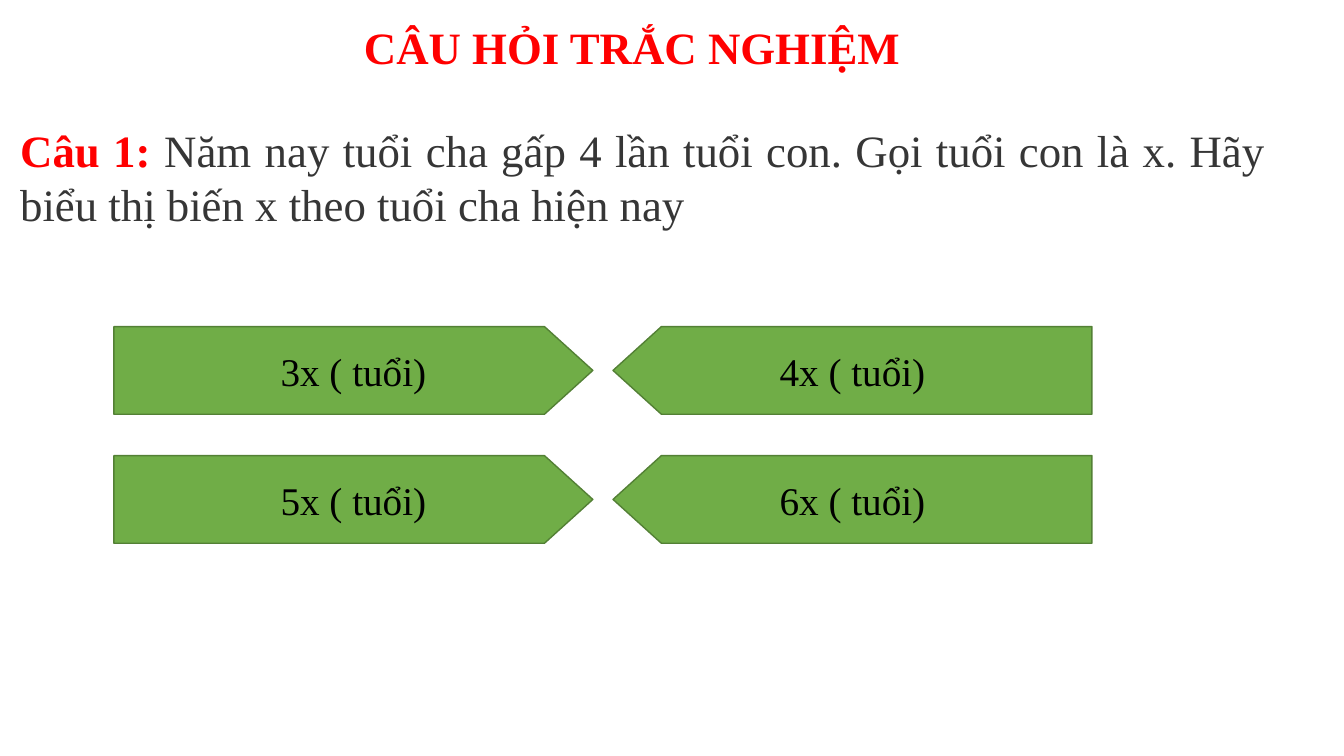
from lxml.etree import SubElement
from pptx import Presentation
from pptx.dml.color import RGBColor
from pptx.enum.text import MSO_ANCHOR, MSO_AUTO_SIZE, PP_ALIGN
from pptx.oxml.ns import qn
from pptx.util import Inches, Pt

# Content
HEADING = "CÂU HỎI TRẮC NGHIỆM"
QUESTION_LABEL = "Câu 1: "
QUESTION = ("Năm nay tuổi cha gấp 4 lần tuổi con. Gọi tuổi con là x. "
            "Hãy biểu thị biến x theo tuổi cha hiện nay")
ANSWERS = [["3x ( tuổi)", "4x ( tuổi)"],
           ["5x ( tuổi)", "6x ( tuổi)"]]

# Style
FONT = "Times New Roman"
RED = RGBColor(0xFF, 0x00, 0x00)
DARK_GRAY = RGBColor(0x36, 0x36, 0x36)
BLACK = RGBColor(0x00, 0x00, 0x00)
GREEN = RGBColor(0x70, 0xAD, 0x47)
DARK_GREEN = RGBColor(0x53, 0x80, 0x35)

# Answer grid, in inches
GRID_LEFT, GRID_TOP = 1.13, 3.24
ANSWER_WIDTH, ANSWER_HEIGHT = 4.75, 0.87
COLUMN_GAP, ROW_GAP = 0.2, 0.41
TIP_DEPTH = 0.48


def add_run(paragraph, text, size, color, bold=False):
    run = paragraph.add_run()
    run.text = text
    run.font.name = FONT
    run.font.size = Pt(size)
    run.font.bold = bold
    run.font.color.rgb = color


def place(placeholder, left, top, width, height, align):
    placeholder.left, placeholder.top = Inches(left), Inches(top)
    placeholder.width, placeholder.height = Inches(width), Inches(height)
    frame = placeholder.text_frame
    frame.auto_size = MSO_AUTO_SIZE.NONE
    frame.vertical_anchor = MSO_ANCHOR.TOP
    paragraph = frame.paragraphs[0]
    paragraph.alignment = align
    paragraph.space_before = Pt(0)
    return paragraph


def add_answer(slide, text, row, column):
    """Draw a pentagon whose tip points to the middle of the grid."""
    left = GRID_LEFT + column * (ANSWER_WIDTH + COLUMN_GAP)
    top = GRID_TOP + row * (ANSWER_HEIGHT + ROW_GAP)
    bottom = top + ANSWER_HEIGHT
    if column == 0:
        flat, tip, shoulder = left, left + ANSWER_WIDTH, left + ANSWER_WIDTH - TIP_DEPTH
    else:
        flat, tip, shoulder = left + ANSWER_WIDTH, left, left + TIP_DEPTH
    corners = [(shoulder, top), (tip, (top + bottom) / 2),
               (shoulder, bottom), (flat, bottom)]
    outline = slide.shapes.build_freeform(Inches(flat), Inches(top))
    outline.add_line_segments([(Inches(x), Inches(y)) for x, y in corners])
    answer = outline.convert_to_shape()
    answer.shadow.inherit = False
    answer.fill.solid()
    answer.fill.fore_color.rgb = GREEN
    answer.line.color.rgb = DARK_GREEN
    answer.line.width = Pt(1)
    answer.text_frame.vertical_anchor = MSO_ANCHOR.MIDDLE
    paragraph = answer.text_frame.paragraphs[0]
    paragraph.alignment = PP_ALIGN.CENTER
    add_run(paragraph, text, 28, BLACK)


def main():
    deck = Presentation()
    deck.slide_width, deck.slide_height = Inches(13.33), Inches(7.5)
    slide = deck.slides.add_slide(deck.slide_layouts[1])

    # Heading
    heading = place(slide.shapes.title, 3.51, 0.15, 6.15, 0.64, PP_ALIGN.LEFT)
    add_run(heading, HEADING, 32, RED, bold=True)

    # Question, without the bullet of the layout
    question = place(slide.placeholders[1], 0.1, 1.17, 12.56, 1.18, PP_ALIGN.JUSTIFY)
    properties = question._p.get_or_add_pPr()
    properties.set("marL", "0")
    properties.set("indent", "0")
    SubElement(properties, qn("a:buNone"))
    add_run(question, QUESTION_LABEL, 32, RED, bold=True)
    add_run(question, QUESTION, 32, DARK_GRAY)

    # Answers
    for row, pair in enumerate(ANSWERS):
        for column, text in enumerate(pair):
            add_answer(slide, text, row, column)

    deck.save("out.pptx")


if __name__ == "__main__":
    main()
